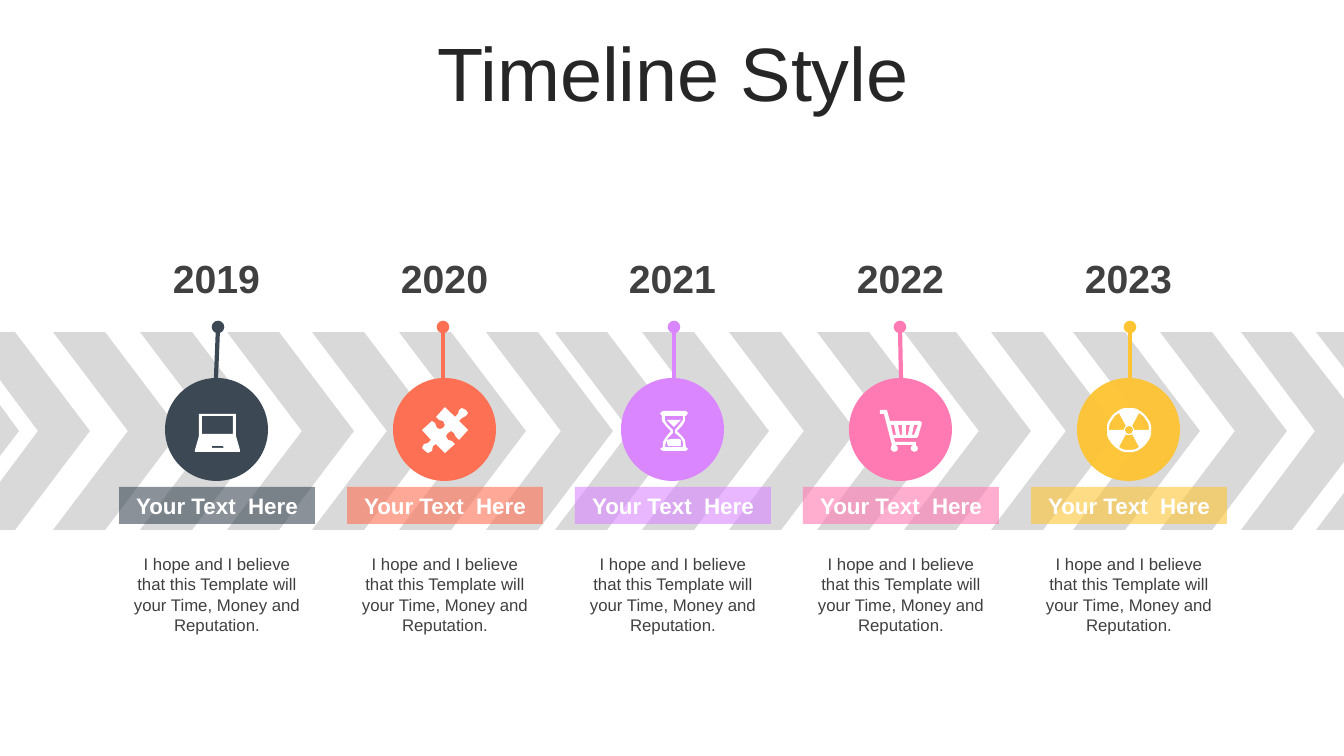
import math

import pptx
import pptx.dml.color
import pptx.enum.shapes
import pptx.enum.text
import pptx.oxml
import pptx.oxml.ns
import pptx.util
from lxml import etree

RGBColor = pptx.dml.color.RGBColor
MSO_SHAPE = pptx.enum.shapes.MSO_SHAPE

WHITE = RGBColor(0xFF, 0xFF, 0xFF)
BAND_GREY = RGBColor(0xD9, 0xD9, 0xD9)
TITLE_INK = RGBColor(0x26, 0x26, 0x26)
TEXT_INK = RGBColor(0x40, 0x40, 0x40)
SLATE = RGBColor(0x3C, 0x49, 0x55)
CORAL = RGBColor(0xFE, 0x70, 0x54)
VIOLET = RGBColor(0xDA, 0x87, 0xFF)
PINK = RGBColor(0xFF, 0x79, 0xB2)
AMBER = RGBColor(0xFE, 0xC4, 0x34)

EMU_PER_PX = 12192000 / 1344
BAND_TOP, BAND_HEIGHT = 332, 198
CIRCLE_Y = 430
DESCRIPTION = "I hope and I believe that this Template will your Time, Money and Reputation."


def px(length):
    return pptx.util.Emu(round(length * EMU_PER_PX))


def arc(radius, start, end):
    return [(radius * math.cos(math.radians(angle)), radius * math.sin(math.radians(angle)))
            for angle in range(start, end + 1, 10)]


def blade(start):
    return arc(20, start, start + 60) + arc(5, start, start + 60)[::-1]


LAPTOP = [
    [(-18, -16), (19, -16), (19, 6), (23, 20), (23, 22), (-22, 22), (-22, 20), (-18, 6)],
    [(-15, -14), (-15, 4), (16, 4), (16, -14)],
    [(-5, 16), (-5, 18), (7, 18), (6, 16)],
]
PUZZLE = [[
    (21, -20), (23, -17), (21, -14), (17, -12), (14, -9), (23, 0), (14, 10), (11, 7),
    (9, 3), (6, 1), (3, 3), (1, 6), (3, 10), (7, 11), (10, 14), (0, 23),
    (-9, 14), (-12, 16), (-13, 21), (-17, 23), (-20, 21), (-23, 18), (-21, 14), (-17, 13),
    (-14, 10), (-23, 0), (-13, -9), (-10, -7), (-8, -2), (-5, -1), (-2, -2), (0, -5),
    (-2, -9), (-6, -10), (-9, -13), (0, -23), (10, -13), (13, -16), (14, -20), (17, -22),
]]
HOURGLASS = [
    [(-10, -19), (13, -19), (15, -17), (13, -14), (12, -14), (12, -9), (9, -4), (4, 1),
     (9, 6), (12, 10), (13, 17), (15, 19), (13, 21), (-10, 21), (-13, 19), (-10, 17),
     (-10, 12), (-7, 7), (-2, 1), (-7, -4), (-11, -9), (-11, -14), (-13, -17)],
    [(-8, -14), (-8, -10), (-6, -6), (0, 0), (0, 3), (-5, 8), (-7, 12), (-8, 17),
     (10, 17), (10, 12), (8, 8), (2, 3), (2, 0), (7, -6), (10, -10), (10, -14)],
    [(-6, -10), (8, -10), (6, -8), (1, -3), (-4, -8)],
    [(2, 9), (6, 9), (8, 10), (8, 16), (-5, 16), (-6, 13), (-6, 10), (-2, 9)],
]
CART = [
    [(-14, -20), (-11, -9), (19, -9), (21, -7), (17, 7), (15, 8), (-7, 8), (-6, 12),
     (15, 12), (15, 15), (17, 18), (16, 21), (13, 22), (10, 20), (10, 17), (12, 15),
     (-5, 15), (-3, 18), (-4, 21), (-7, 22), (-10, 20), (-10, 17), (-9, 15),
     (-17, -16), (-21, -16), (-21, -20)],
    [(13, -5), (11, 5), (13, 5), (17, -5)],
    [(5, -5), (5, 5), (7, 5), (9, -5)],
    [(-3, -5), (-1, 5), (1, 5), (1, -5)],
    [(-10, -5), (-8, 5), (-5, 5), (-7, -5)],
]
RADIATION = [arc(22, 0, 350), arc(4, 0, 350), blade(60), blade(180), blade(300)]

BAND_EDGES = [
    [[(0, 332), (15, 332), (90, 431), (15, 530), (0, 530), (0, 482), (38, 431), (0, 380)]],
    [[(0, 405), (19, 431), (0, 456)]],
    [[(1241, 332), (1292, 332), (1344, 399), (1344, 462), (1292, 530), (1241, 530), (1315, 431)]],
    [[(1344, 493), (1344, 530), (1316, 530)], [(1316, 332), (1344, 332), (1344, 368)]],
]
CHEVRON_RUNS = [(53, 3), (312, 3), (555, 3), (817, 3), (1073, 2)]
MILESTONES = [
    ("2019", SLATE, 100, LAPTOP, 218, 216),
    ("2020", CORAL, 100, PUZZLE, 443, 443),
    ("2021", VIOLET, 100, HOURGLASS, 674, 674),
    ("2022", PINK, 100, CART, 900, 901),
    ("2023", AMBER, 96, RADIATION, 1130, 1130),
]


class SlideBuilder:
    font = "Arial"

    def __init__(self, slide):
        self.slide = slide

    def paint(self, shape, color, opacity=100):
        shape.fill.solid()
        shape.fill.fore_color.rgb = color
        shape.line.fill.background()
        if opacity < 100:
            color_node = shape._element.spPr.find(".//" + pptx.oxml.ns.qn("a:srgbClr"))
            alpha = etree.SubElement(color_node, pptx.oxml.ns.qn("a:alpha"))
            alpha.set("val", str(opacity * 1000))

    def set_text(self, shape, text, size, color, bold=False):
        frame = shape.text_frame
        frame.word_wrap = True
        frame.text = text
        paragraph = frame.paragraphs[0]
        paragraph.alignment = pptx.enum.text.PP_ALIGN.CENTER
        font = paragraph.runs[0].font
        font.name, font.size, font.bold = self.font, pptx.util.Pt(size), bold
        font.color.rgb = color

    def title(self, text, left, top, width, height):
        shape = self.slide.shapes.title
        shape.left, shape.top, shape.width, shape.height = map(px, (left, top, width, height))
        self.set_text(shape, text, 54, TITLE_INK)
        shape.text_frame.auto_size = pptx.enum.text.MSO_AUTO_SIZE.NONE
        shape.text_frame.vertical_anchor = pptx.enum.text.MSO_ANCHOR.MIDDLE
        shape.text_frame.paragraphs[0].line_spacing = 0.9

    def text(self, text, left, top, width, height, size, color=TEXT_INK, bold=False):
        box = self.slide.shapes.add_textbox(*map(px, (left, top, width, height)))
        self.set_text(box, text, size, color, bold)
        return box

    def preset(self, kind, left, top, width, height, color, opacity=100):
        shape = self.slide.shapes.add_shape(kind, *map(px, (left, top, width, height)))
        shape.shadow.inherit = False
        self.paint(shape, color, opacity)
        return shape

    def outline(self, contours, color, x=0, y=0):
        moved = [[(x + dx, y + dy) for dx, dy in contour] for contour in contours]
        builder = self.slide.shapes.build_freeform(*moved[0][0], scale=EMU_PER_PX)
        for number, contour in enumerate(moved):
            if number:
                builder.move_to(*contour[0])
            builder.add_line_segments(contour[1:], close=True)
        shape = builder.convert_to_shape()
        shape.shadow.inherit = False
        self.paint(shape, color)

    def pin(self, start_x, start_y, end_x, end_y, color):
        connector = self.slide.shapes.add_connector(
            pptx.enum.shapes.MSO_CONNECTOR.STRAIGHT, *map(px, (start_x, start_y, end_x, end_y)))
        connector.line.color.rgb = color
        connector.line.width = pptx.util.Pt(3)
        properties = connector._element.spPr
        line = properties.find(pptx.oxml.ns.qn("a:ln"))
        etree.SubElement(line, pptx.oxml.ns.qn("a:headEnd")).set("type", "oval")
        etree.SubElement(properties, pptx.oxml.ns.qn("a:effectLst"))


def main():
    presentation = pptx.Presentation()
    presentation.slide_width, presentation.slide_height = px(1344), px(756)
    builder = SlideBuilder(presentation.slides.add_slide(presentation.slide_layouts[5]))
    builder.title("Timeline Style", 35, 37, 1276, 80)

    for start, count in CHEVRON_RUNS:
        for number in range(count):
            chevron = builder.preset(MSO_SHAPE.CHEVRON, start + 87 * number, BAND_TOP,
                                     127, BAND_HEIGHT, BAND_GREY)
            chevron.adjustments[0] = 0.59
    for edge in BAND_EDGES:
        builder.outline(edge, BAND_GREY)

    for number, (year, color, opacity, icon, pin_x, foot_x) in enumerate(MILESTONES):
        center = 217 + 228 * number
        builder.preset(MSO_SHAPE.OVAL, center - 52, CIRCLE_Y - 52, 103, 103, color, opacity)
        builder.pin(pin_x, 327, foot_x, 378, color)
        label = builder.text("Your Text  Here", center - 98, 487, 196, 37, 16, WHITE, True)
        builder.paint(label, color, 60)
        builder.text(DESCRIPTION, center - 98, 549, 196, 92, 12)
        builder.outline(icon, WHITE, center, CIRCLE_Y)
        builder.text(year, center - 79, 249, 157, 57, 28, bold=True)

    presentation.save("out.pptx")


if __name__ == "__main__":
    main()
